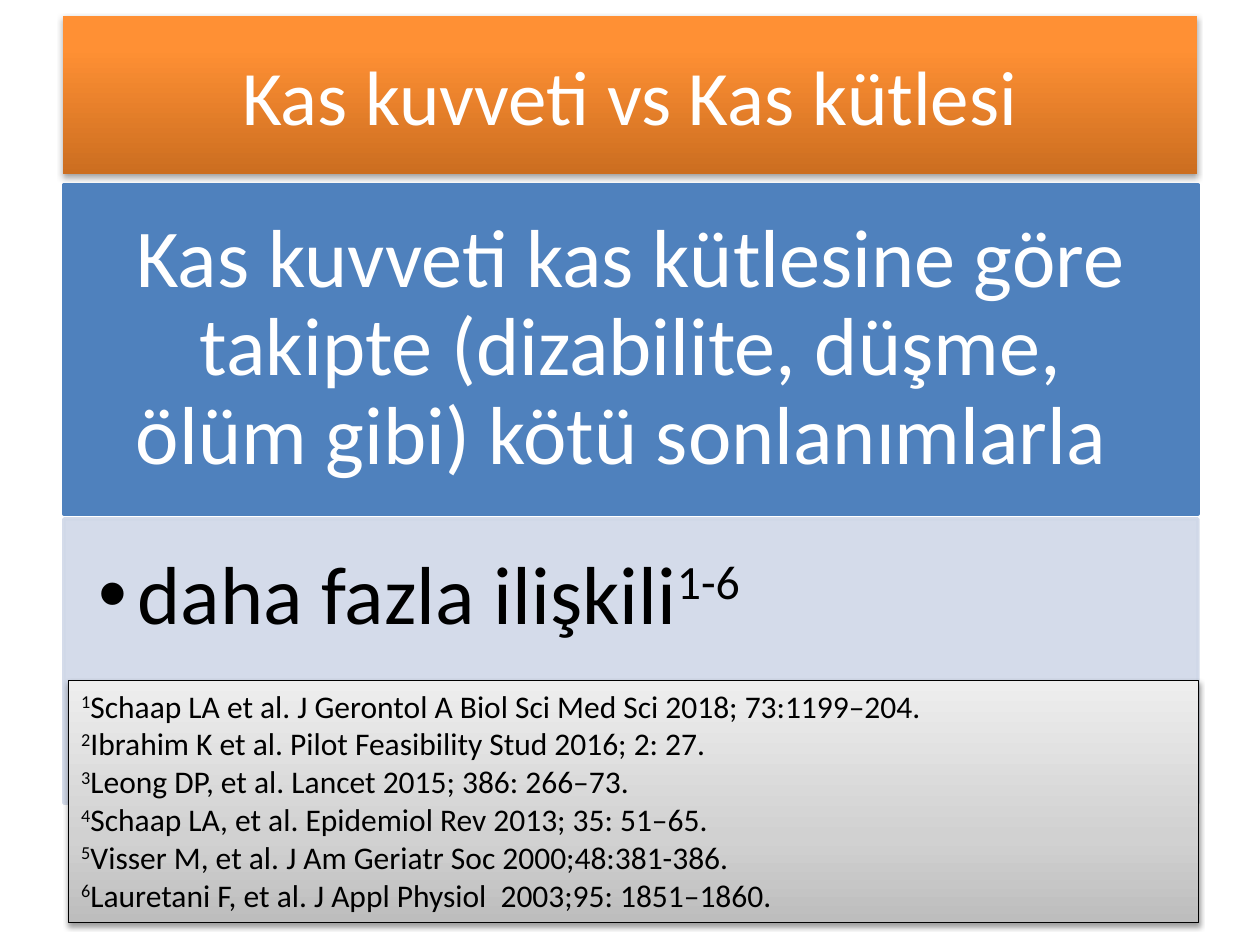
from pptx import Presentation
from pptx.dml.color import RGBColor
from pptx.enum.shapes import MSO_SHAPE as Shape
from pptx.enum.text import MSO_ANCHOR as Anchor, MSO_AUTO_SIZE as AutoSize, PP_ALIGN as Align
from pptx.oxml import parse_xml
from pptx.oxml.ns import nsdecls, qn
from pptx.util import Pt

REFERENCES = [
    "Schaap LA et al. J Gerontol A Biol Sci Med Sci 2018; 73:1199–204.",
    "Ibrahim K et al. Pilot Feasibility Stud 2016; 2: 27.",
    "Leong DP, et al. Lancet 2015; 386: 266–73.",
    "Schaap LA, et al. Epidemiol Rev 2013; 35: 51–65.",
    "Visser M, et al. J Am Geriatr Soc 2000;48:381-386.",
    "Lauretani F, et al. J Appl Physiol  2003;95: 1851–1860.",
]


def color(value):
    return RGBColor.from_string(value)


def set_values(target, values):
    for name, value in values.items():
        setattr(target, name, value)


def place(box, left, top, width, height):
    set_values(box, {"left": Pt(left), "top": Pt(top),
                     "width": Pt(width), "height": Pt(height)})


def set_frame(box, anchor, insets=(7.2, 3.6, 7.2, 3.6)):
    sides = ("margin_left", "margin_top", "margin_right", "margin_bottom")
    set_values(box.text_frame, {"word_wrap": True, "auto_size": AutoSize.NONE,
                                "vertical_anchor": anchor})
    set_values(box.text_frame, {side: Pt(inset) for side, inset in zip(sides, insets)})


def paint(box, fill, line=None, line_width=0.75):
    box.shadow.inherit = False
    box.fill.solid()
    box.fill.fore_color.rgb = color(fill)
    if line:
        box.line.color.rgb = color(line)
        box.line.width = Pt(line_width)
    else:
        box.line.fill.background()


def set_opacity(box, percent):
    for element in box._element.spPr.iter(qn("a:srgbClr")):
        element.append(parse_xml(f'<a:alpha {nsdecls("a")} val="{percent * 1000}"/>'))


def add_gradient(box, stops):
    """Replace the solid fill with a gradient that runs from bottom to top."""
    marks = "".join(f'<a:gs pos="{position * 1000}"><a:srgbClr val="{value}"/></a:gs>'
                    for position, value in stops)
    properties = box._element.spPr
    properties.replace(properties.find(qn("a:solidFill")), parse_xml(
        f'<a:gradFill {nsdecls("a")} rotWithShape="1"><a:gsLst>{marks}</a:gsLst>'
        '<a:lin ang="16200000" scaled="0"/></a:gradFill>'))


def add_shadow(box, opacity, distance):
    box._element.spPr.find(qn("a:effectLst")).append(parse_xml(
        f'<a:outerShdw {nsdecls("a")} blurRad="{Pt(3.1)}" dist="{Pt(distance)}" '
        'dir="5400000" rotWithShape="0"><a:srgbClr val="000000">'
        f'<a:alpha val="{opacity * 1000}"/></a:srgbClr></a:outerShdw>'))


def add_span(para, text, size, text_color, raised=False):
    span = para.add_run()
    span.text = text
    set_values(span.font, {"name": "Calibri", "size": Pt(size)})
    span.font.color.rgb = color(text_color)
    if raised:
        span._r.get_or_add_rPr().set("baseline", "30000")


def add_bullet(para, indent):
    properties = para._p.get_or_add_pPr()
    properties.set("marL", str(Pt(indent)))
    properties.set("indent", str(-Pt(indent)))
    properties.append(parse_xml(f'<a:buFont {nsdecls("a")} typeface="Arial"/>'))
    properties.append(parse_xml(f'<a:buChar {nsdecls("a")} char="•"/>'))


def fill_title(title):
    place(title, 36, 9.2, 648, 90)
    set_frame(title, Anchor.MIDDLE)
    paint(title, "FF9034")
    add_gradient(title, [(0, "CC6E20"), (80, "FF9034"), (100, "FF9136")])
    add_shadow(title, 35, 1.8)
    para = title.text_frame.paragraphs[0]
    para.alignment = Align.CENTER
    add_span(para, "Kas kuvveti vs Kas kütlesi", 44, "FFFFFF")


def add_statement(page):
    box = page.shapes.add_shape(Shape.RECTANGLE, 0, 0, 0, 0)
    place(box, 36.5, 105.5, 648, 188.2)
    set_frame(box, Anchor.MIDDLE, (26.6, 15.2, 26.6, 15.2))
    paint(box, "4F81BD", "4F81BD", 2)
    para = box.text_frame.paragraphs[0]
    set_values(para, {"alignment": Align.CENTER, "line_spacing": 0.9})
    add_span(para, "Kas kuvveti kas kütlesine göre takipte (dizabilite, düşme, "
                   "ölüm gibi) kötü sonlanımlarla ", 47, "FFFFFF")


def fill_body(body):
    place(body, 36.5, 296.5, 648, 162.5)
    set_frame(body, Anchor.TOP, (19.6, 19.6, 26.6, 29.5))
    paint(body, "D0D8E8", "D0D8E8", 2)
    set_opacity(body, 90)
    para = body.text_frame.paragraphs[0]
    set_values(para, {"line_spacing": 0.9, "space_before": Pt(0)})
    add_bullet(para, 22.5)
    add_span(para, "daha fazla ilişkili", 47, "000000")
    add_span(para, "1-6", 47, "000000", raised=True)


def add_references(page):
    box = page.shapes.add_shape(Shape.RECTANGLE, 0, 0, 0, 0)
    place(box, 39.3, 388.8, 645.6, 138.4)
    set_frame(box, Anchor.TOP)
    paint(box, "D1D1D1", "000000")
    add_gradient(box, [(0, "BDBDBD"), (35, "D1D1D1"), (100, "EEEEEE")])
    add_shadow(box, 38, 1.6)
    frame = box.text_frame
    for number, reference in enumerate(REFERENCES, 1):
        para = frame.paragraphs[0] if number == 1 else frame.add_paragraph()
        para.alignment = Align.LEFT
        add_span(para, str(number), 18, "000000", raised=True)
        add_span(para, reference, 18, "000000")


def main():
    deck = Presentation()
    set_values(deck, {"slide_width": Pt(720), "slide_height": Pt(540)})
    page = deck.slides.add_slide(deck.slide_layouts[1])
    # Heading and main statement
    fill_title(page.shapes.title)
    add_statement(page)
    # Conclusion, with the references over its lower part
    fill_body(page.placeholders[1])
    add_references(page)
    deck.save("out.pptx")


if __name__ == "__main__":
    main()
